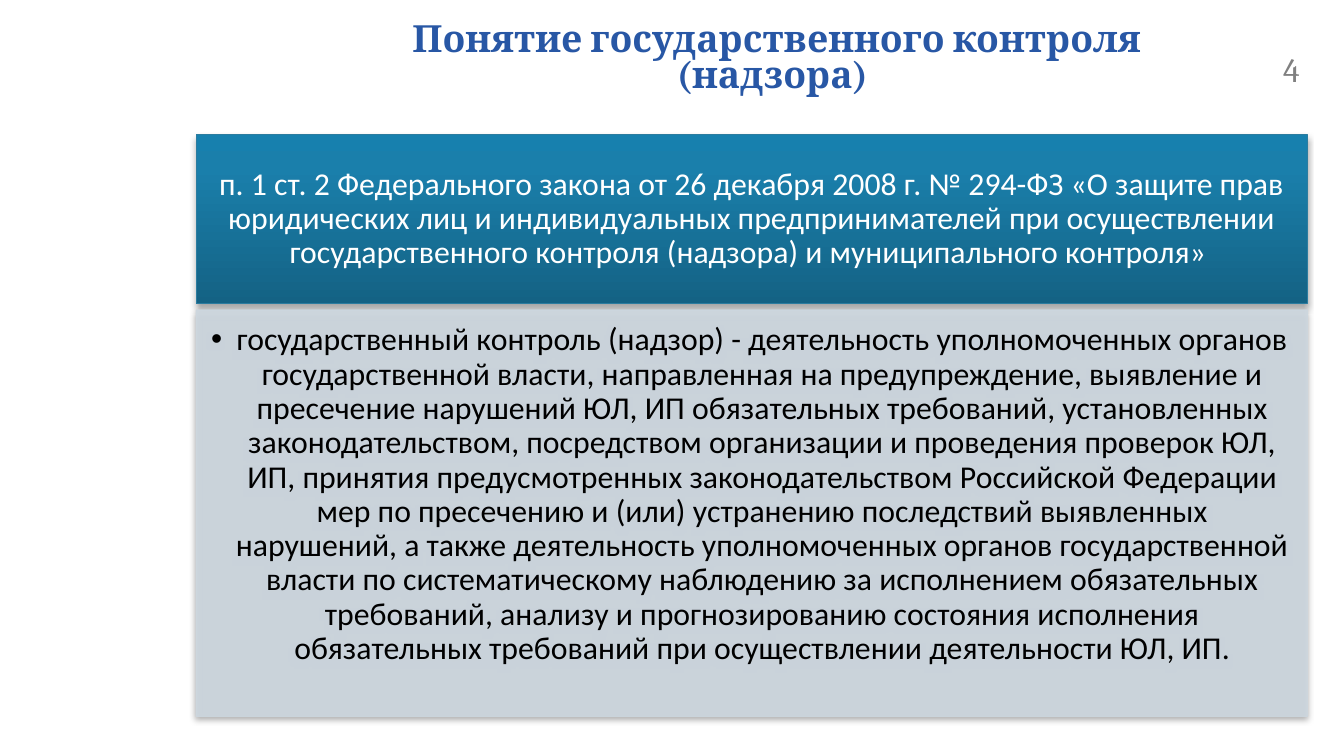
"""Builds a slide defining state control (supervision) under Federal Law 294-ФЗ."""
from lxml import etree
from pptx import Presentation
from pptx.dml.color import RGBColor
from pptx.enum.shapes import MSO_SHAPE
from pptx.enum.text import MSO_ANCHOR, PP_ALIGN
from pptx.oxml.ns import qn
from pptx.util import Cm, Pt

RECTANGLE = MSO_SHAPE.RECTANGLE
TOP, MIDDLE = MSO_ANCHOR.TOP, MSO_ANCHOR.MIDDLE
CENTER, LEFT = PP_ALIGN.CENTER, PP_ALIGN.LEFT

TITLE_BLUE = RGBColor(0x28, 0x57, 0xA5)
NUMBER_GRAY = RGBColor(0x80, 0x80, 0x80)
HEADER_LINE = RGBColor(0x2C, 0x7C, 0x9F)
BODY_GRAY = RGBColor(0xCD, 0xD7, 0xDF)
WHITE = RGBColor(0xFF, 0xFF, 0xFF)
BLACK = RGBColor(0x00, 0x00, 0x00)
HEADER_GRADIENT = [
    (0, RGBColor(0x14, 0x62, 0x84)),
    (80, RGBColor(0x1A, 0x7F, 0xAB)),
    (100, RGBColor(0x17, 0x80, 0xAE)),
]

TITLE = "Понятие государственного контроля (надзора) "
NUMBER = "4"
LAW = (
    "п. 1 ст. 2 Федерального закона от 26 декабря 2008 г. № 294-ФЗ «О защите прав "
    "юридических лиц и индивидуальных предпринимателей при осуществлении "
    "государственного контроля (надзора) и муниципального контроля» "
)
DEFINITION = (
    "государственный контроль (надзор) - деятельность уполномоченных органов "
    "государственной власти, направленная на предупреждение, выявление и "
    "пресечение нарушений ЮЛ, ИП обязательных требований, установленных "
    "законодательством, посредством организации и проведения проверок ЮЛ, ИП, "
    "принятия предусмотренных законодательством Российской Федерации мер по "
    "пресечению и (или) устранению последствий выявленных нарушений, а также "
    "деятельность уполномоченных органов государственной власти по "
    "систематическому наблюдению за исполнением обязательных требований, анализу "
    "и прогнозированию состояния исполнения обязательных требований при "
    "осуществлении деятельности ЮЛ, ИП."
)

PANEL_LEFT, PANEL_WIDTH = Cm(3.71), Cm(21)
HEADER_TOP, HEADER_HEIGHT = Cm(2.54), Cm(3.2)
PANEL_GAP = Cm(0.12)
BODY_HEIGHT = Cm(7.67)
HANGING = Cm(0.48)


def add_child(parent, tag, **attributes):
    child = etree.SubElement(parent, qn(tag))
    for key, value in attributes.items():
        child.set(key, str(value))
    return child


def write(frame, text, font_name, size, color, align, spacing=1.0, bold=False):
    paragraph = frame.paragraphs[0]
    paragraph.alignment = align
    paragraph.line_spacing = spacing
    run = paragraph.add_run()
    run.text = text
    run.font.name = font_name
    run.font.size = Pt(size)
    run.font.bold = bold
    run.font.color.rgb = color


def set_margins(frame, left, top, right, bottom):
    frame.margin_left, frame.margin_top = Cm(left), Cm(top)
    frame.margin_right, frame.margin_bottom = Cm(right), Cm(bottom)


def add_panel(slide, top, height, line_color, anchor, margins):
    panel = slide.shapes.add_shape(RECTANGLE, PANEL_LEFT, top, PANEL_WIDTH, height)
    panel.line.color.rgb = line_color
    panel.line.width = Pt(0.75)
    panel.shadow.inherit = False
    effects = panel._element.spPr.find(qn("a:effectLst"))
    shadow = add_child(effects, "a:outerShdw", blurRad=Pt(3.1), dist=Pt(1.8),
                       dir=90 * 60000, rotWithShape=0)
    shadow_color = add_child(shadow, "a:srgbClr", val=BLACK)
    add_child(shadow_color, "a:alpha", val=35000)
    frame = panel.text_frame
    frame.word_wrap = True
    frame.vertical_anchor = anchor
    set_margins(frame, *margins)
    return panel


def fill_gradient(panel, stops):
    panel.fill.gradient()
    panel.fill.gradient_angle = 90
    stop_list = next(panel._element.spPr.iter(qn("a:gsLst")))
    for default_stop in list(stop_list):
        stop_list.remove(default_stop)
    for position, color in stops:
        stop = add_child(stop_list, "a:gs", pos=position * 1000)
        add_child(stop, "a:srgbClr", val=color)


def fill_translucent(panel, color, opacity):
    panel.fill.solid()
    panel.fill.fore_color.rgb = color
    for solid in panel._element.spPr.iter(qn("a:solidFill")):
        add_child(solid.find(qn("a:srgbClr")), "a:alpha", val=opacity * 1000)


def add_bullet(paragraph):
    properties = paragraph._p.get_or_add_pPr()
    properties.set("marL", str(HANGING))
    properties.set("indent", str(-HANGING))
    add_child(properties, "a:buFont", typeface="Arial")
    add_child(properties, "a:buChar", char="•")


def main():
    presentation = Presentation()
    presentation.slide_width, presentation.slide_height = Cm(25.4), Cm(14.28)
    slide = presentation.slides.add_slide(presentation.slide_layouts[5])

    title = slide.shapes.title
    title.left, title.top, title.width, title.height = Cm(6.65), Cm(0.33), Cm(16.05), Cm(1.6)
    title.text_frame.vertical_anchor = MIDDLE
    write(title.text_frame, TITLE, "Cambria", 20, TITLE_BLUE, CENTER, 0.8, True)

    number = slide.shapes.add_textbox(Cm(24), Cm(0.79), Cm(1.4), Cm(0.76))
    number.text_frame.word_wrap = True
    write(number.text_frame, NUMBER, "Cambria", 18, NUMBER_GRAY, LEFT)

    header = add_panel(slide, HEADER_TOP, HEADER_HEIGHT, HEADER_LINE, MIDDLE,
                       (0.33, 0.2, 0.33, 0.2))
    fill_gradient(header, HEADER_GRADIENT)
    write(header.text_frame, LAW, "Calibri", 17, WHITE, CENTER, 0.9)

    body_top = HEADER_TOP + HEADER_HEIGHT + PANEL_GAP
    body = add_panel(slide, body_top, BODY_HEIGHT, BODY_GRAY, TOP,
                     (0.25, 0.25, 0.33, 0.38))
    fill_translucent(body, BODY_GRAY, 90)
    add_bullet(body.text_frame.paragraphs[0])
    write(body.text_frame, DEFINITION, "Calibri", 17, BLACK, CENTER, 0.9)

    presentation.save("out.pptx")


if __name__ == "__main__":
    main()
